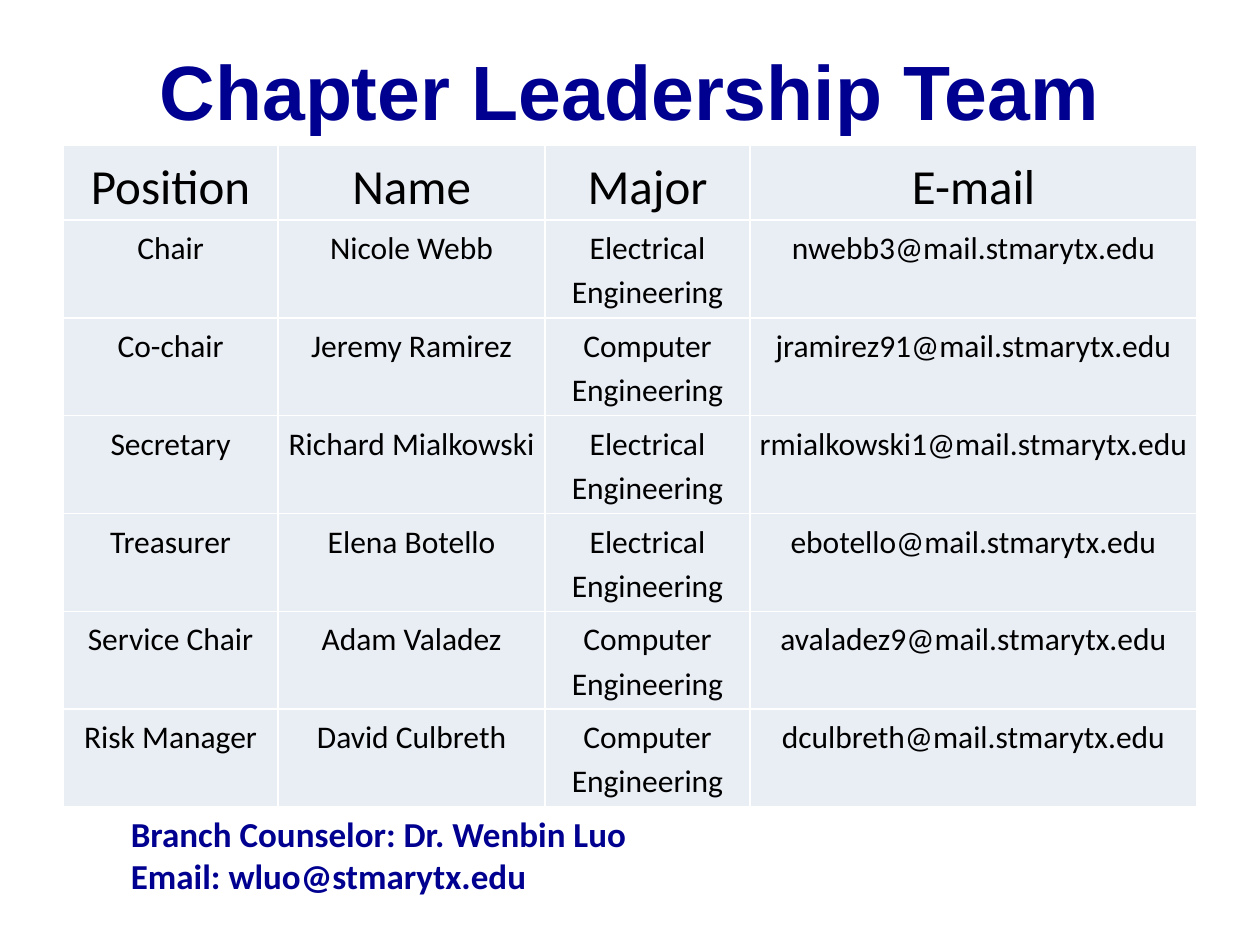
import dataclasses

import lxml.etree
import pptx
import pptx.dml.color
import pptx.enum.text
import pptx.oxml.ns
import pptx.util

ALIGN = pptx.enum.text.PP_ALIGN
ANCHOR = pptx.enum.text.MSO_ANCHOR
FIT = pptx.enum.text.MSO_AUTO_SIZE
UNIT = pptx.util.Inches(0.1)
COLS, ROWS = 100, 75


@dataclasses.dataclass(frozen=True)
class Theme:
    navy: str = "000090"
    ink: str = "000000"
    tint: str = "E9EDF4"
    rule: str = "FFFFFF"
    head: str = "Arial"
    body: str = "Calibri"
    title: int = 44
    label: int = 28
    note: int = 20
    cell: int = 18


THEME = Theme()
HEADS = ["Position", "Name", "Major", "E-mail"]
EE = ["Electrical", "Engineering"]
CE = ["Computer", "Engineering"]
TEAM = [
    ["Chair", "Nicole Webb", "Electrical Engineering", "nwebb3@mail.stmarytx.edu"],
    ["Co-chair", "Jeremy Ramirez", CE, "jramirez91@mail.stmarytx.edu"],
    ["Secretary", "Richard Mialkowski", EE, "rmialkowski1@mail.stmarytx.edu"],
    ["Treasurer", "Elena Botello", "Electrical Engineering", "ebotello@mail.stmarytx.edu"],
    ["Service Chair", "Adam Valadez", CE, "avaladez9@mail.stmarytx.edu"],
    ["Risk Manager", "David Culbreth", "Computer Engineering", "dculbreth@mail.stmarytx.edu"],
]
WIDTHS = [1.71, 2.12, 1.63, 3.55]
HEAD_ROW = 5.9


def grid(*box):
    return [round(n * UNIT) for n in box]


def write(frame, lines, size, face, color, bold=False, align=ALIGN.LEFT, space=None):
    for i, line in enumerate(lines):
        para = frame.paragraphs[0] if i == 0 else frame.add_paragraph()
        para.alignment = align
        if space:
            para.line_spacing = space
        run = para.add_run()
        run.text = line
        font = run.font
        font.size = pptx.util.Pt(size)
        font.name = face
        font.bold = bold
        font.color.rgb = pptx.dml.color.RGBColor.from_string(color)


def rule(cell):
    props = cell._tc.get_or_add_tcPr()
    name = pptx.oxml.ns.qn
    for i, side in enumerate(["a:lnL", "a:lnR", "a:lnT", "a:lnB"]):
        line = lxml.etree.Element(name(side), w=str(pptx.util.Pt(1)))
        fill = lxml.etree.SubElement(line, name("a:solidFill"))
        lxml.etree.SubElement(fill, name("a:srgbClr"), val=THEME.rule)
        props.insert(i, line)


def add_title(slide, box):
    shape = slide.shapes.title
    shape.left, shape.top, shape.width, shape.height = grid(*box)
    frame = shape.text_frame
    frame.auto_size = FIT.NONE
    frame.vertical_anchor = ANCHOR.MIDDLE
    write(frame, ["Chapter Leadership Team"], THEME.title, THEME.head,
          THEME.navy, True, ALIGN.CENTER)


def add_note(slide, box):
    frame = slide.shapes.add_textbox(*grid(*box)).text_frame
    frame.word_wrap = True
    frame.auto_size = FIT.SHAPE_TO_FIT_TEXT
    lines = ["Branch Counselor: Dr. Wenbin Luo", "Email: wluo@stmarytx.edu"]
    write(frame, lines, THEME.note, THEME.body, THEME.navy, True)


def fill_cell(cell, text, size):
    cell.fill.solid()
    cell.fill.fore_color.rgb = pptx.dml.color.RGBColor.from_string(THEME.tint)
    inset = pptx.util.Inches(0.03)
    cell.margin_left = cell.margin_right = inset
    cell.margin_top = cell.margin_bottom = inset
    lines = [text] if isinstance(text, str) else text
    write(cell.text_frame, lines, size, THEME.body, THEME.ink,
          align=ALIGN.CENTER, space=1.15)
    rule(cell)


def add_team(slide, box):
    data = [HEADS] + TEAM
    table = slide.shapes.add_table(len(data), len(HEADS), *grid(*box)).table
    table.first_row = table.horz_banding = False
    wide, high = box[2:]
    for col, part in zip(table.columns, WIDTHS):
        col.width = round(wide * part / sum(WIDTHS) * UNIT)
    for r, items in enumerate(data):
        tall = (high - HEAD_ROW) / len(TEAM) if r else HEAD_ROW
        table.rows[r].height = round(tall * UNIT)
        for c, text in enumerate(items):
            fill_cell(table.cell(r, c), text, THEME.cell if r else THEME.label)


def main():
    deck = pptx.Presentation()
    deck.slide_width, deck.slide_height = grid(COLS, ROWS)
    slide = deck.slides.add_slide(deck.slide_layouts[5])
    add_title(slide, (5, 0.9, 90, 12.5))
    add_note(slide, (9.4, 64, 78.9, 7.7))
    add_team(slide, (5, 11.5, 90, 52.5))
    deck.save("out.pptx")


if __name__ == "__main__":
    main()
